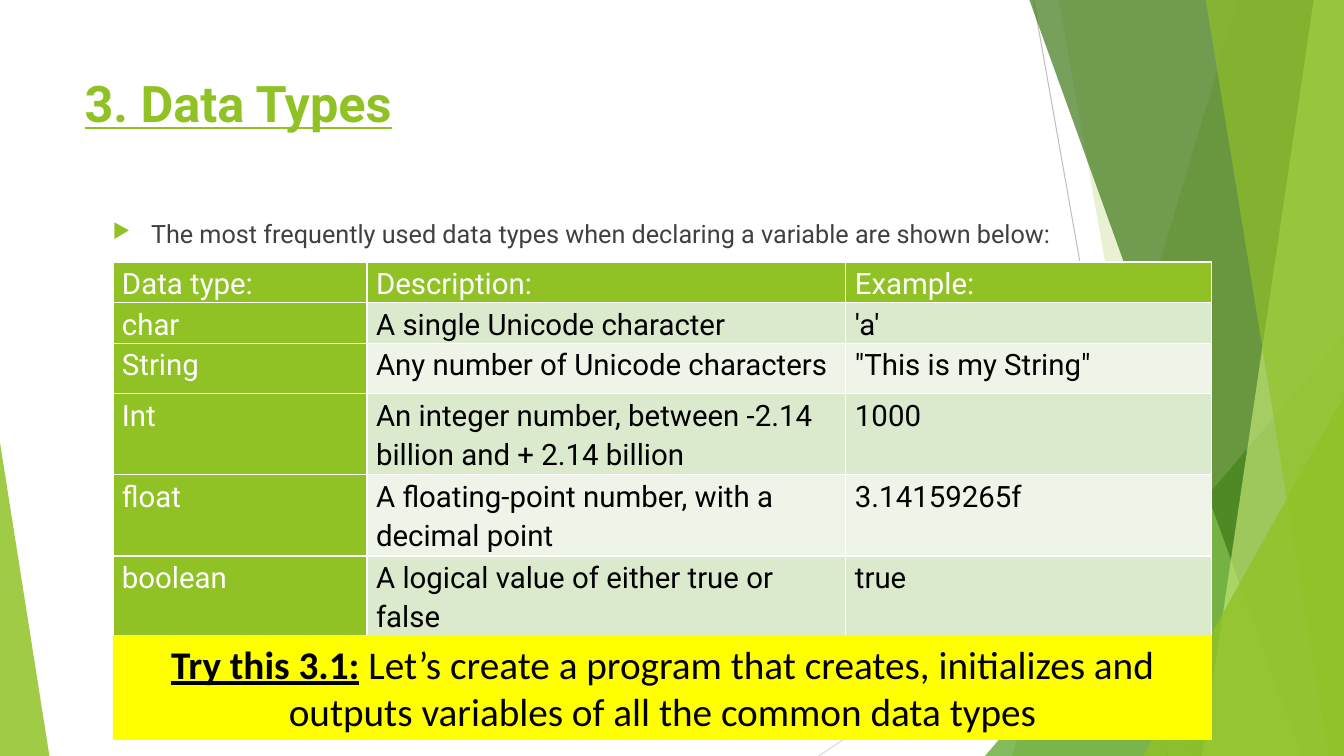
from lxml import etree
from pptx import Presentation, util as u
from pptx.dml.color import RGBColor
from pptx.enum import shapes, text
from pptx.oxml import ns

INK = {
    "lime": "90C226", "leaf": "54A021", "pine": "3F7819", "pale": "C0E474",
    "white": "FFFFFF", "black": "000000", "text": "404040", "yellow": "FFFF00",
    "band": "DBE9CD", "light": "EEF4E8", "gray": "BFBFBF", "silver": "D9D9D9",
}
ROWS = [
    ("Data type:", "Description:", "Example:"),
    ("char", "A single Unicode character", "'a'"),
    ("String", "Any number of Unicode characters", '"This is my String"'),
    ("Int", "An integer number, between -2.14 billion and + 2.14 billion", "1000"),
    ("float", "A floating-point number, with a decimal point", "3.14159265f"),
    ("boolean", "A logical value of either true or false", "true"),
]
WIDTHS = [2.52, 4.75, 3.63]
HEIGHTS = [0.39, 0.39, 0.5, 0.79, 0.79, 0.67]


def color(name):
    return RGBColor.from_string(INK[name])


def add(parent, tag, **attrs):
    return etree.SubElement(parent, ns.qn(tag), attrs)


def write(para, words, size, ink, font="Roboto", bold=False, under=False):
    run = para.add_run()
    run.text = words
    face = run.font
    face.name, face.size = font, u.Pt(size)
    face.bold, face.underline = bold, under
    face.color.rgb = color(ink)


def paint(shape, ink, alpha=100):
    shape.shadow.inherit = False
    shape.fill.solid()
    shape.fill.fore_color.rgb = color(ink)
    shape.line.fill.background()
    if alpha < 100:
        tone = shape.fill._xPr.find(".//" + ns.qn("a:srgbClr"))
        add(tone, "a:alpha", val=str(alpha * 1000))


def place(box):
    return [u.Inches(n) for n in box]


def frame(slide, box):
    body = slide.shapes.add_textbox(*place(box)).text_frame
    body.word_wrap = True
    return body.paragraphs[0]


def rule(slide, start, end, ink):
    line = slide.shapes.add_connector(
        shapes.MSO_CONNECTOR.STRAIGHT, *place(start + end))
    line.line.color.rgb = color(ink)
    line.line.width = u.Pt(0.75)
    add(line._element.spPr, "a:effectLst")


def panel(slide, box, top, foot, ink, alpha):
    x, y, w, h = box
    pen = slide.shapes.build_freeform(u.Inches(x + top), u.Inches(y), 1.0)
    pen.add_line_segments([place(p) for p in (
        (x + w, y), (x + w, y + h), (x + foot, y + h))], close=True)
    paint(pen.convert_to_shape(), ink, alpha)


def wedge(slide, box, left, width, height, apex, ink, alpha):
    x, y, w, h = box
    shape = slide.shapes.add_shape(
        shapes.MSO_SHAPE.ISOSCELES_TRIANGLE,
        *place((x + left, y + h - height, width, height)))
    shape.adjustments[0] = apex
    paint(shape, ink, alpha)


def decor(slide, box):
    x, y, w, h = box
    rule(slide, (x + 10.25, y), (x + 11.58, y + h), "gray")
    rule(slide, (x + w, y + 4.03), (x + 8.12, y + h), "silver")
    panel(slide, box, 12.28, 10.04, "lime", 30)
    panel(slide, box, 10.5, 11.83, "lime", 20)
    wedge(slide, box, 9.77, 3.56, 4.17, 1, "leaf", 72)
    panel(slide, box, 10.21, 12.91, "pine", 70)
    panel(slide, box, 13.03, 11.92, "pale", 70)
    panel(slide, box, 11.96, 13.18, "lime", 65)
    wedge(slide, box, 11.34, 1.99, 3.57, 1, "lime", 80)
    wedge(slide, box, 0, 0.49, 3.11, 0, "lime", 85)


def title(slide, box):
    write(frame(slide, box), "3. Data Types", 36, "lime", bold=True, under=True)


def intro(slide, box):
    para = frame(slide, box)
    write(para, "The most frequently used data types when declaring "
          "a variable are shown below:", 18, "text")
    props = para._p.get_or_add_pPr()
    props.set("marL", str(u.Inches(0.38)))
    props.set("indent", str(-u.Inches(0.38)))
    tone = add(props, "a:buClr")
    add(tone, "a:srgbClr", val=INK["lime"])
    add(props, "a:buSzPct", val="80000")
    add(props, "a:buChar", char="▶")


def edge(cell):
    props = cell._tc.get_or_add_tcPr()
    for side in "LRTB":
        line = add(props, "a:ln" + side, w=str(u.Pt(1)))
        fill = add(line, "a:solidFill")
        add(fill, "a:srgbClr", val=INK["white"])


def grid(slide, box):
    table = slide.shapes.add_table(len(ROWS), len(WIDTHS), *place(box)).table
    for col, width in zip(table.columns, WIDTHS):
        col.width = u.Inches(width)
    for r, (row, height) in enumerate(zip(ROWS, HEIGHTS)):
        table.rows[r].height = u.Inches(height)
        for c, words in enumerate(row):
            cell = table.cell(r, c)
            head = r == 0 or c == 0
            edge(cell)
            cell.fill.solid()
            cell.fill.fore_color.rgb = color(
                "lime" if head else "band" if r % 2 else "light")
            cell.margin_left = cell.margin_right = u.Inches(0.09)
            cell.margin_top = cell.margin_bottom = 0
            para = cell.text_frame.paragraphs[0]
            para.line_spacing = 1.15
            write(para, words, 21, "white" if head else "black")


def task(slide, box):
    shape = slide.shapes.add_shape(shapes.MSO_SHAPE.RECTANGLE, *place(box))
    paint(shape, "yellow")
    body = shape.text_frame
    body.word_wrap = True
    body.vertical_anchor = text.MSO_ANCHOR.TOP
    para = body.paragraphs[0]
    para.alignment = text.PP_ALIGN.CENTER
    write(para, "Try this 3.1:", 28, "black", "Calibri", True, True)
    write(para, " Let’s create a program that creates, initializes and "
          "outputs variables of all the common data types",
          28, "black", "Calibri")


def main():
    deck = Presentation()
    deck.slide_width, deck.slide_height = u.Inches(13.33), u.Inches(7.5)
    slide = deck.slides.add_slide(deck.slide_layouts[6])
    decor(slide, (0, 0, 13.33, 7.5))
    title(slide, (0.74, 0.67, 9.4, 1.44))
    intro(slide, (1.02, 2.12, 10.63, 0.58))
    grid(slide, (1.12, 2.6, sum(WIDTHS), sum(HEIGHTS)))
    task(slide, (1.12, 6.3, 10.9, 1.04))
    deck.save("out.pptx")


if __name__ == "__main__":
    main()
